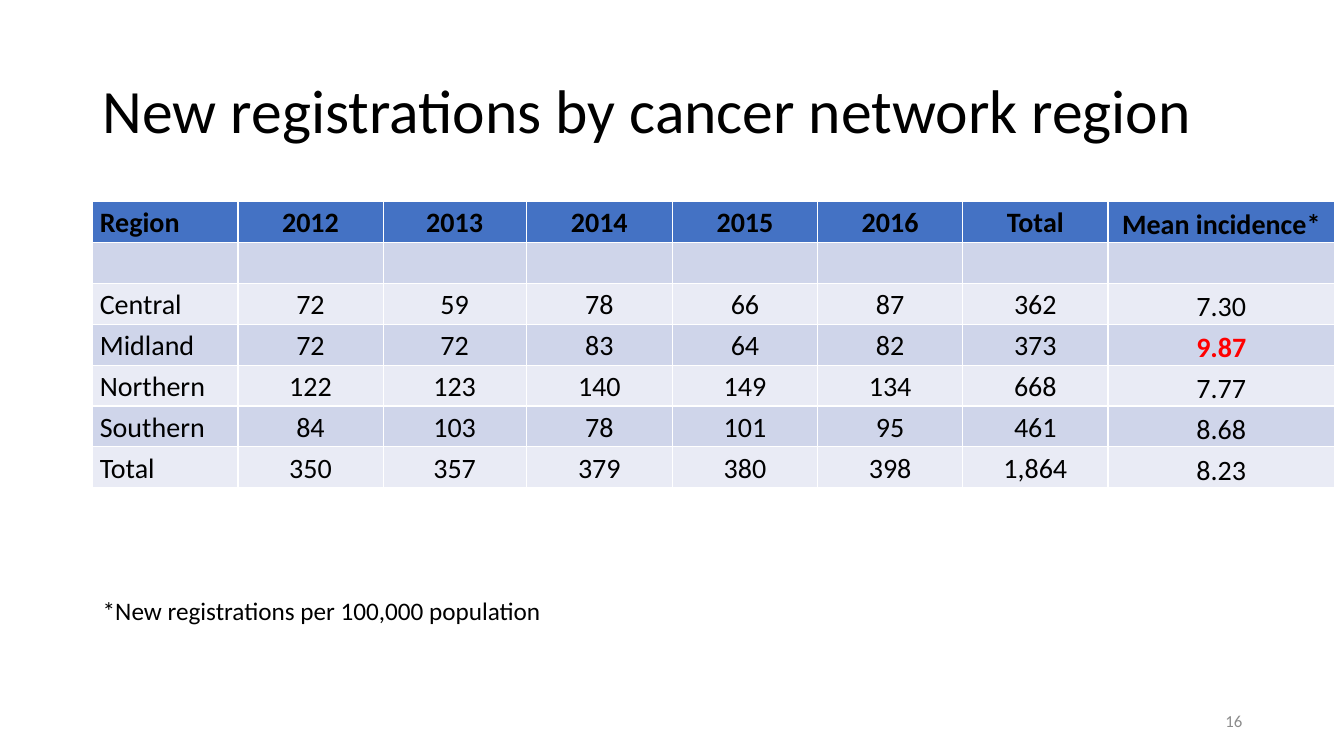
"""Build the slide on new cancer registrations by network region."""
from pptx import Presentation
from pptx import util as u
from pptx.dml import color
from pptx.enum import text

THEME = {
    "font": "Calibri",
    "ink": "000000", "alert": "FF0000", "muted": "8C8C8C",
    "header": "4472C4", "bands": ("CFD5EA", "E9EBF5"),
    "title": 44, "table": 20, "note": 18, "number": 12,
}
LEFT, CENTER, RIGHT = text.PP_ALIGN.LEFT, text.PP_ALIGN.CENTER, text.PP_ALIGN.RIGHT
TOP, MIDDLE, BOTTOM = text.MSO_ANCHOR.TOP, text.MSO_ANCHOR.MIDDLE, text.MSO_ANCHOR.BOTTOM


def write(frame, content, size, ink="ink", bold=False, align=LEFT, spacing=1.0):
    """Put one formatted paragraph into a text frame."""
    paragraph = frame.paragraphs[0]
    paragraph.alignment, paragraph.line_spacing = align, spacing
    run = paragraph.add_run()
    run.text = content
    formats = {"name": THEME["font"], "size": u.Pt(THEME[size]), "bold": bold}
    for name, value in formats.items():
        setattr(run.font, name, value)
    run.font.color.rgb = color.RGBColor.from_string(THEME[ink])


presentation = Presentation()
presentation.slide_width, presentation.slide_height = u.Inches(13.33), u.Inches(7.5)
slide = presentation.slides.add_slide(presentation.slide_layouts[5])

title = slide.shapes.title
place = {"left": 0.92, "top": 0.4, "width": 11.5, "height": 1.45}
for name, value in place.items():
    setattr(title, name, u.Inches(value))
title.text_frame.auto_size = text.MSO_AUTO_SIZE.NONE
title.text_frame.vertical_anchor = MIDDLE
write(title.text_frame, "New registrations by cancer network region", "title", spacing=0.9)

registrations = [
    ["Region", "2012", "2013", "2014", "2015", "2016", "Total", "Mean incidence*"],
    [""] * 8,
    ["Central", "72", "59", "78", "66", "87", "362", "7.30"],
    ["Midland", "72", "72", "83", "64", "82", "373", "9.87"],
    ["Northern", "122", "123", "140", "149", "134", "668", "7.77"],
    ["Southern", "84", "103", "78", "101", "95", "461", "8.68"],
    ["Total", "350", "357", "379", "380", "398", "1,864", "8.23"],
]
column_widths = [1.44, 1.44, 1.42, 1.45, 1.44, 1.44, 1.44, 2.25]
last_column = len(column_widths) - 1
highest_incidence = "9.87"

table = slide.shapes.add_table(
    len(registrations), len(column_widths),
    u.Inches(0.92), u.Inches(2), u.Inches(sum(column_widths)), u.Inches(2.84),
).table
for column, width in zip(table.columns, column_widths):
    column.width = u.Inches(width)

for row_index, values in enumerate(registrations):
    is_header = row_index == 0
    fill = THEME["header"] if is_header else THEME["bands"][(row_index - 1) % 2]
    for column_index, value in enumerate(values):
        cell = table.cell(row_index, column_index)
        cell.fill.solid()
        cell.fill.fore_color.rgb = color.RGBColor.from_string(fill)
        formats = {
            "margin_left": u.Inches(0.07), "margin_right": u.Inches(0.07),
            "margin_top": 0, "margin_bottom": 0,
            "vertical_anchor": BOTTOM if column_index == last_column else MIDDLE,
        }
        for name, setting in formats.items():
            setattr(cell, name, setting)
        if value:
            is_highest = value == highest_incidence
            write(cell.text_frame, value, "table",
                  ink="alert" if is_highest else "ink",
                  bold=is_header or is_highest,
                  align=CENTER if column_index else LEFT, spacing=1.07)

captions = [
    ("*New registrations per 100,000 population", (0.92, 5.86, 6.52, 0.4),
     "note", "ink", LEFT, TOP),
    ("16", (9.42, 6.95, 3, 0.4), "number", "muted", RIGHT, MIDDLE),
]
for content, box, size, ink, align, anchor in captions:
    frame = slide.shapes.add_textbox(*map(u.Inches, box)).text_frame
    frame.word_wrap = True
    frame.vertical_anchor = anchor
    write(frame, content, size, ink=ink, align=align)

presentation.save("out.pptx")
